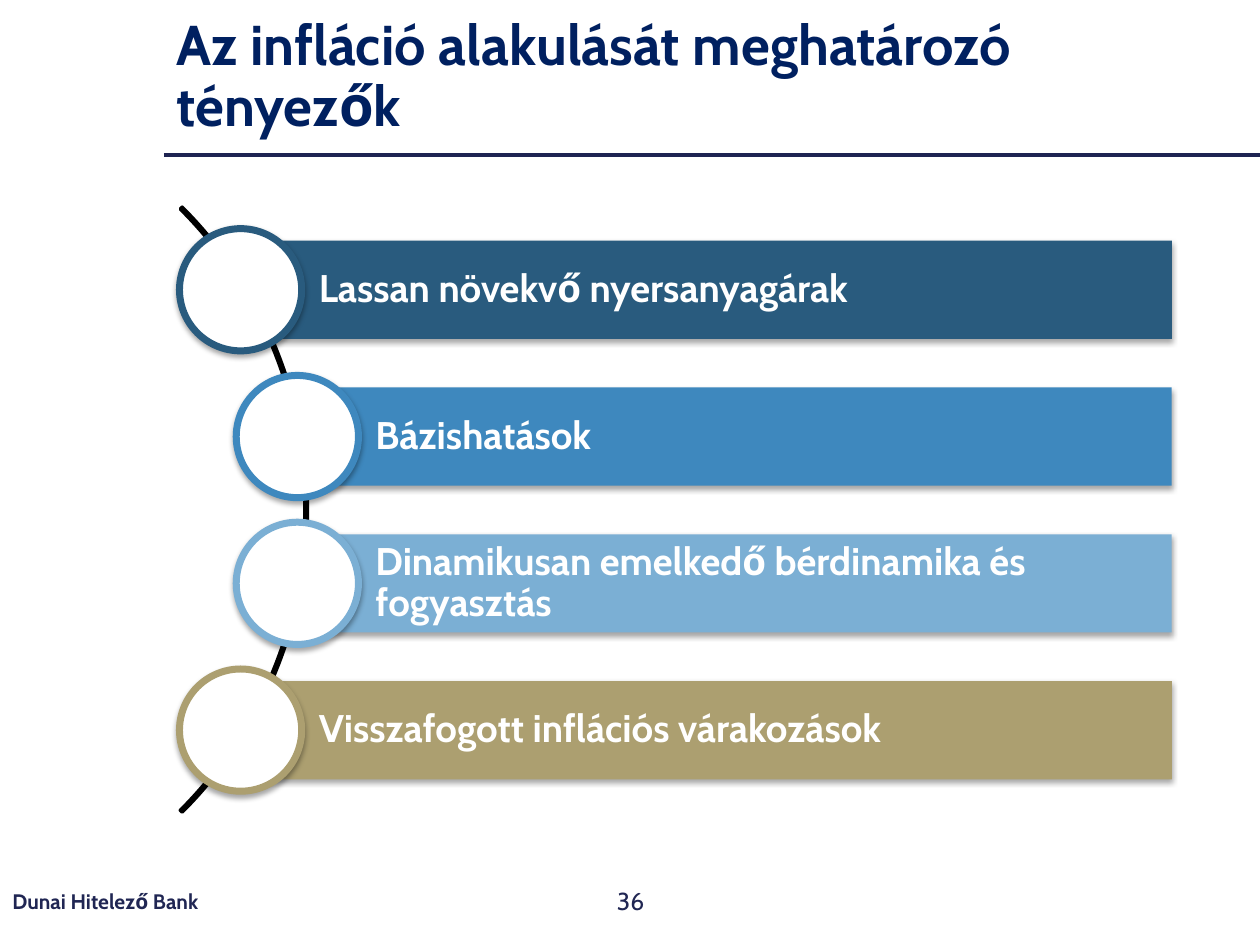
import pptx
import pptx.util
import pptx.dml.color
import pptx.enum.shapes
import pptx.enum.text
import pptx.oxml
import pptx.oxml.ns

Inches, Pt = pptx.util.Inches, pptx.util.Pt
Shape = pptx.enum.shapes.MSO_SHAPE
Align = pptx.enum.text.PP_ALIGN

COLORS = {
    "title": "002060", "rule": "1E2452", "foot": "202653",
    "white": "FFFFFF", "black": "000000",
    "navy": "295B7E", "blue": "3E88BE", "sky": "7BAFD4", "sand": "AC9F70",
}
FACTORS = [
    ("Lassan növekvő nyersanyagárak", "navy", 1.91),
    ("Bázishatások", "blue", 2.36),
    ("Dinamikusan emelkedő bérdinamika és fogyasztás", "sky", 2.36),
    ("Visszafogott inflációs várakozások", "sand", 1.91),
]
TOP, PITCH, HEIGHT, RIGHT, DISC = 1.91, 1.165, 0.78, 9.3, 0.97


def rgb(name):
    """Return the named colour."""
    return pptx.dml.color.RGBColor.from_string(COLORS[name])


def write(shape, text, size, color, bold=True, align=Align.LEFT, space=1.0):
    """Set wrapped, vertically centred text on a shape."""
    frame = shape.text_frame
    frame.text = text
    frame.word_wrap = True
    frame.vertical_anchor = pptx.enum.text.MSO_ANCHOR.MIDDLE
    para = frame.paragraphs[0]
    para.alignment, para.line_spacing = align, space
    font = para.runs[0].font
    font.name, font.size, font.bold = "Cabin", Pt(size), bold
    font.color.rgb = rgb(color)


def label(slide, box, *args, **kwargs):
    """Add a text box."""
    shape = slide.shapes.add_textbox(*map(Inches, box))
    write(shape, *args, **kwargs)


def form(slide, kind, box, fill=None, line=None, width=0):
    """Add a preset shape without the theme's shadow."""
    shape = slide.shapes.add_shape(kind, *map(Inches, box))
    shape.shadow.inherit = False
    if fill:
        shape.fill.solid()
        shape.fill.fore_color.rgb = rgb(fill)
    else:
        shape.fill.background()
    if line:
        shape.line.color.rgb = rgb(line)
        shape.line.width = Pt(width)
    else:
        shape.line.fill.background()
    return shape


def shade(shape):
    """Give a shape a soft shadow below it."""
    effects = shape.element.spPr.find(pptx.oxml.ns.qn("a:effectLst"))
    effects.append(pptx.oxml.parse_xml(
        f'<a:outerShdw {pptx.oxml.ns.nsdecls("a")} blurRad="{Pt(3.1)}" '
        f'dist="{Pt(1.8)}" dir="5400000" rotWithShape="0">'
        f'<a:srgbClr val="{COLORS["black"]}"><a:alpha val="35000"/></a:srgbClr>'
        '</a:outerShdw>'))


def rule(slide, start, end, y):
    """Add the horizontal line under the title."""
    line = slide.shapes.add_connector(
        pptx.enum.shapes.MSO_CONNECTOR.STRAIGHT,
        Inches(start), Inches(y), Inches(end), Inches(y))
    line.line.color.rgb = rgb("rule")
    line.line.width = Pt(2.25)
    line.element.spPr.append(pptx.oxml.parse_xml(
        f'<a:effectLst {pptx.oxml.ns.nsdecls("a")}/>'))


def curve(slide):
    """Add the thin arc that links the discs."""
    arc = form(slide, Shape.BLOCK_ARC, (-4.35, 0.65, 6.79, 6.79),
               line="black", width=2)
    for i, value in enumerate((189, 27, 0.003)):
        arc.adjustments[i] = value


def factor(slide, text, color, left, top):
    """Add one bar with its disc."""
    bar = form(slide, Shape.RECTANGLE, (left, top, RIGHT - left, HEIGHT), color)
    shade(bar)
    write(bar, text, 22, "white", space=0.9)
    frame = bar.text_frame
    frame.margin_left = Inches(0.62)
    frame.margin_top = frame.margin_right = frame.margin_bottom = Inches(0.06)
    box = (left - DISC / 2, top + (HEIGHT - DISC) / 2, DISC, DISC)
    shade(form(slide, Shape.OVAL, box, "white", color, 4))


def main():
    """Build and save the slide."""
    deck = pptx.Presentation()
    deck.slide_width, deck.slide_height = Inches(10), Inches(7.5)
    slide = deck.slides.add_slide(deck.slide_layouts[6])
    rule(slide, 1.3, 10, 1.23)
    label(slide, (1.3, 0, 8.7, 1.24),
          "Az infláció alakulását meghatározó tényezők", 32, "title", space=0.9)
    label(slide, (0, 6.95, 3.38, 0.4), "Dunai Hitelező Bank", 12, "foot")
    label(slide, (3.88, 6.95, 2.25, 0.4), "36", 14, "foot",
          bold=False, align=Align.CENTER)
    curve(slide)
    for i, (text, color, left) in enumerate(FACTORS):
        factor(slide, text, color, left, TOP + i * PITCH)
    deck.save("out.pptx")


if __name__ == "__main__":
    main()
